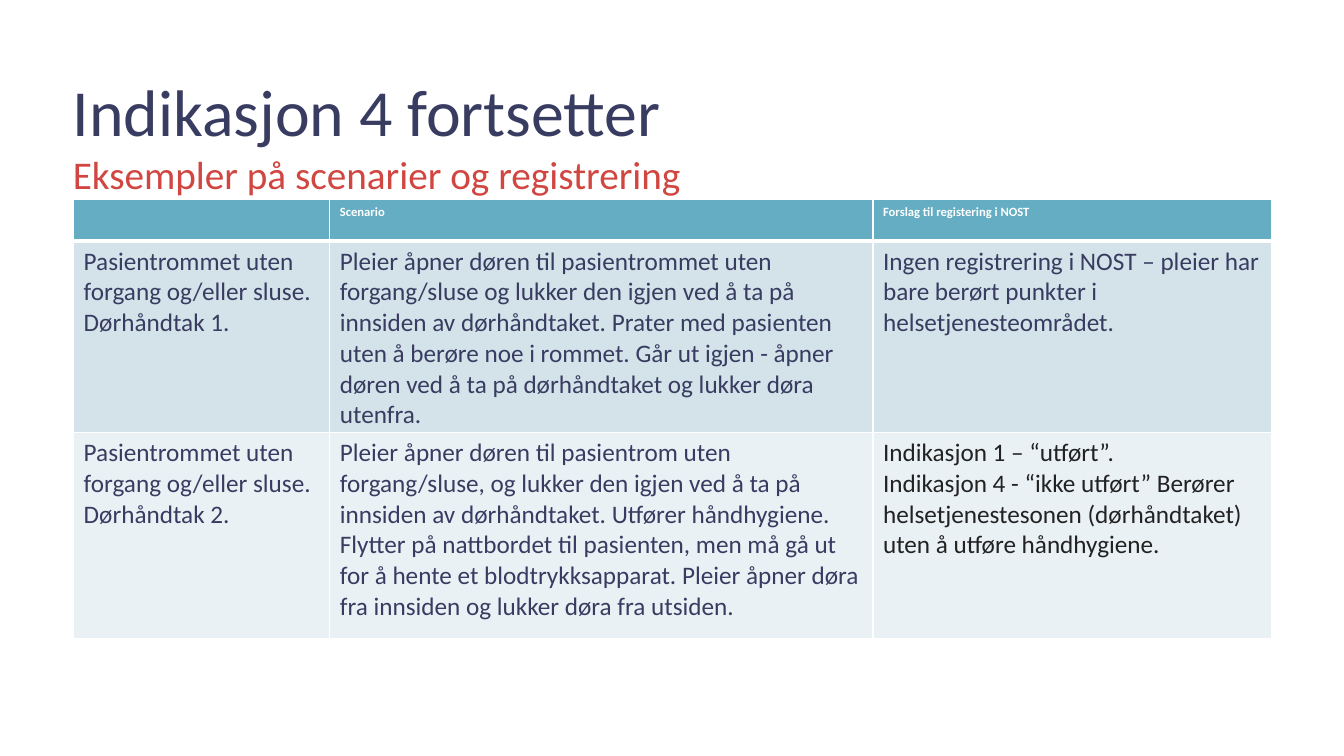
from pptx import Presentation as Deck
from pptx.dml.color import RGBColor as Color
from pptx.oxml import parse_xml as make
from pptx.oxml.ns import nsdecls as names
from pptx.util import Pt

HUES = {"navy": "393C61", "red": "D14641", "teal": "65ADC3", "mist": "D3E3E9",
        "pale": "EAF1F5", "white": "FFFFFF", "ink": "222222"}


class Page:
    font = "Calibri"

    def __init__(self, deck):
        self.slide = deck.slides.add_slide(deck.slide_layouts[6])

    def hue(self, name):
        return Color.from_string(HUES[name])

    def fill_in(self, frame, lines, size, hue, bold=False, gap=None):
        frame.word_wrap = True
        for i, line in enumerate(lines):
            para = frame.add_paragraph() if i else frame.paragraphs[0]
            if gap:
                para.line_spacing = gap
            run = para.add_run()
            run.text = line
            font = run.font
            font.name, font.size, font.bold = self.font, Pt(size), bold
            font.color.rgb = self.hue(hue)

    def text(self, box, line, size, hue, gap=None):
        frame = self.slide.shapes.add_textbox(*map(Pt, box)).text_frame
        frame.margin_left = frame.margin_right = 0
        frame.margin_top = frame.margin_bottom = 0
        self.fill_in(frame, [line], size, hue, gap=gap)

    def edge(self, cell, base):
        props = cell._tc.get_or_add_tcPr()
        for i, side in enumerate("LRTB"):
            wide = Pt(base if side == "B" else 1)
            props.insert(i, make(
                f'<a:ln{side} {names("a")} w="{wide}"><a:solidFill>'
                f'<a:srgbClr val="{HUES["white"]}"/></a:solidFill></a:ln{side}>'))

    def table(self, left, top, cols, rows, data, fills):
        grid = self.slide.shapes.add_table(
            len(rows), len(cols), Pt(left), Pt(top), Pt(sum(cols)), Pt(sum(rows))).table
        grid.horz_banding = False
        for col, wide in zip(grid.columns, cols):
            col.width = Pt(wide)
        for r, (high, line, fill) in enumerate(zip(rows, data, fills)):
            grid.rows[r].height = Pt(high)
            head = r == 0
            for c, (hue, *lines) in enumerate(line):
                cell = grid.cell(r, c)
                cell.margin_bottom = Pt(1)
                cell.fill.solid()
                cell.fill.fore_color.rgb = self.hue(fill)
                self.edge(cell, 3 if head else 1)
                self.fill_in(cell.text_frame, lines, 9 if head else 18, hue, head)


DATA = [
    [("white",), ("white", "Scenario"), ("white", "Forslag til registering i NOST")],
    [("navy", "Pasientrommet uten forgang og/eller sluse. Dørhåndtak 1."),
     ("navy", "Pleier åpner døren til pasientrommet uten forgang/sluse og lukker den "
              "igjen ved å ta på innsiden av dørhåndtaket. Prater med pasienten uten å "
              "berøre noe i rommet. Går ut igjen - åpner døren ved å ta på dørhåndtaket "
              "og lukker døra utenfra."),
     ("navy", "Ingen registrering i NOST – pleier har bare berørt punkter i "
              "helsetjenesteområdet.")],
    [("navy", "Pasientrommet uten forgang og/eller sluse. Dørhåndtak 2."),
     ("navy", "Pleier åpner døren til pasientrom uten forgang/sluse, og lukker den igjen "
              "ved å ta på innsiden av dørhåndtaket. Utfører håndhygiene. Flytter på "
              "nattbordet til pasienten, men må gå ut for å hente et blodtrykksapparat. "
              "Pleier åpner døra fra innsiden og lukker døra fra utsiden."),
     ("ink", "Indikasjon 1 – “utført”.",
      "Indikasjon 4 - “ikke utført” Berører helsetjenestesonen (dørhåndtaket) uten å "
      "utføre håndhygiene.")],
]


def main():
    deck = Deck()
    deck.slide_width, deck.slide_height = Pt(960), Pt(540)
    page = Page(deck)
    page.text((52, 57, 855, 51), "Indikasjon 4 fortsetter", 47, "navy", 0.9)
    page.text((52, 107.5, 855, 34), "Eksempler på scenarier og registrering", 28, "red")
    page.table(52.6, 142.6, (183, 388, 285), (29.6, 136.8, 146.8), DATA,
               ("teal", "mist", "pale"))
    deck.save("out.pptx")


if __name__ == "__main__":
    main()
